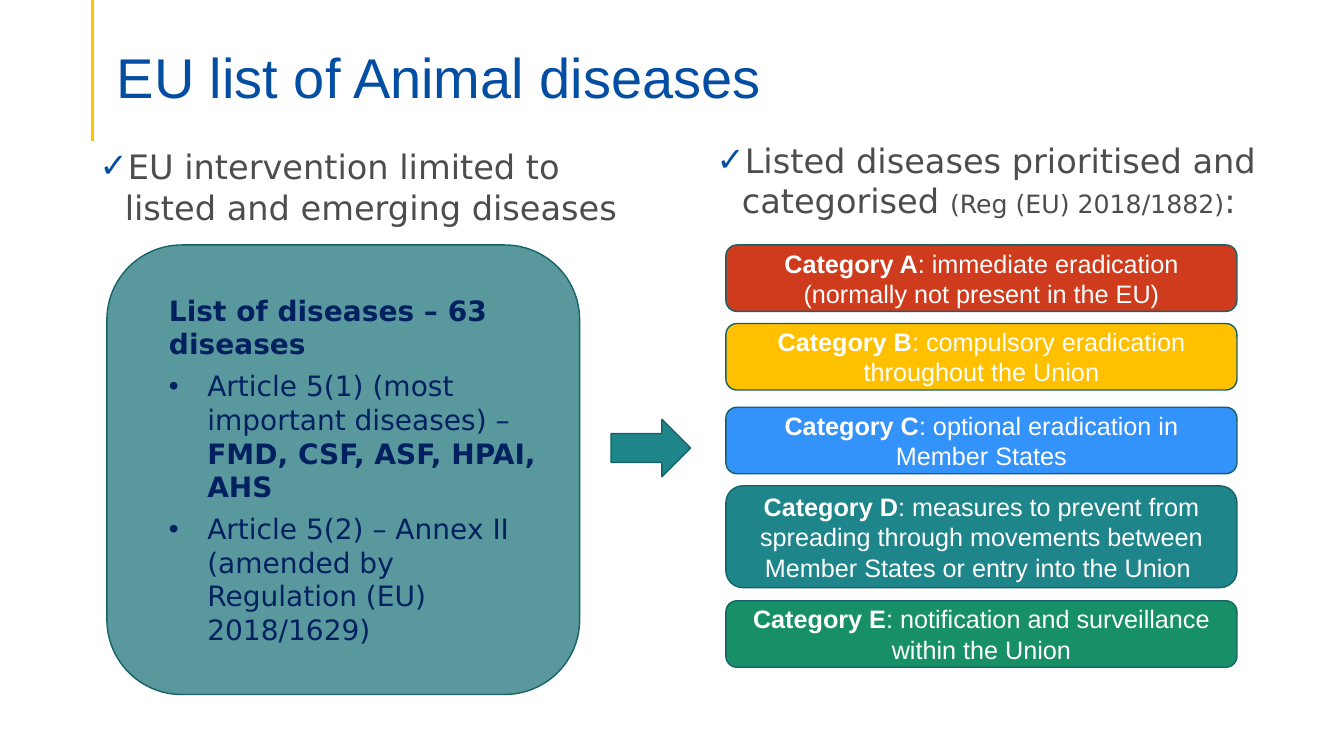
from lxml import etree
from pptx import Presentation
from pptx.dml.color import RGBColor
from pptx.enum.shapes import MSO_CONNECTOR, MSO_SHAPE
from pptx.enum.text import MSO_ANCHOR, PP_ALIGN
from pptx.oxml.ns import qn
from pptx.util import Inches, Pt

BLUE = RGBColor(0x03, 0x4E, 0xA2)
NAVY = RGBColor(0x00, 0x20, 0x60)
GREY = RGBColor(0x4D, 0x4D, 0x4D)
WHITE = RGBColor(0xFF, 0xFF, 0xFF)
RED = RGBColor(0xCF, 0x3B, 0x1D)
AMBER = RGBColor(0xFF, 0xC0, 0x00)
SKY = RGBColor(0x34, 0x92, 0xFB)
TEAL = RGBColor(0x1E, 0x85, 0x8B)
PALE_TEAL = RGBColor(0x59, 0x98, 0x9D)
DARK_TEAL = RGBColor(0x16, 0x62, 0x67)
GREEN = RGBColor(0x17, 0x90, 0x68)
SANS, BODY = "Arial", "DejaVu Sans"

# Grid of 100 columns by 100 rows; boxes are (left, top, width, height)
W, H = Inches(13.33), Inches(7.5)
COL, ROW = W / 100, H / 100

# Name, description, colour, top row within the region, rows high
CATEGORIES = [
    ("Category A", ": immediate eradication (normally not present in the EU)", RED, 0, 8.8),
    ("Category B", ": compulsory eradication throughout the Union", AMBER, 10.4, 8.8),
    ("Category C", ": optional eradication in Member States", SKY, 21.47, 8.8),
    ("Category D", ": measures to prevent from spreading through movements "
     "between Member States or entry into the Union ", TEAL, 31.87, 13.47),
    ("Category E", ": notification and surveillance within the Union", GREEN, 47.07, 8.8),
]


def place(box):
    x, y, w, h = box
    return round(x * COL), round(y * ROW), round(w * COL), round(h * ROW)


def add_runs(p, runs, font, color):
    """Add (text, size, bold) runs to a paragraph."""
    for text, size, bold in runs:
        r = p.add_run()
        r.text = text
        r.font.name, r.font.size, r.font.bold = font, Pt(size), bold
        r.font.color.rgb = color


def set_indent(p, left, hanging=0, bullet=None, color=None):
    pPr = p._p.get_or_add_pPr()
    pPr.set("marL", str(Inches(left)))
    pPr.set("indent", str(Inches(-hanging)))
    if color is not None:
        clr = etree.SubElement(pPr, qn("a:buClr"))
        etree.SubElement(clr, qn("a:srgbClr")).set("val", str(color))
    if bullet:
        etree.SubElement(pPr, qn("a:buFont")).set("typeface", SANS)
        etree.SubElement(pPr, qn("a:buChar")).set("char", bullet)
    p.space_after = Pt(6)


def add_block(s, kind, box, fill):
    sp = s.shapes.add_shape(kind, *place(box))
    sp.shadow.inherit = False
    sp.fill.solid()
    sp.fill.fore_color.rgb = fill
    sp.line.color.rgb = DARK_TEAL
    sp.line.width = Pt(1)
    tf = sp.text_frame
    tf.word_wrap = True
    tf.vertical_anchor = MSO_ANCHOR.MIDDLE
    return tf


def add_text(s, box):
    tf = s.shapes.add_textbox(*place(box)).text_frame
    tf.word_wrap = True
    return tf


def add_title(s, box, text):
    x, y, w, h = box
    # Accent rule left of the title, from the top edge of the slide
    rule_x = round((x - 1.05) * COL)
    rule = s.shapes.add_connector(MSO_CONNECTOR.STRAIGHT, rule_x, 0,
                                  rule_x, round((y + h + 4) * ROW))
    rule.line.color.rgb = AMBER
    rule.line.width = Pt(2.25)
    etree.SubElement(rule._element.spPr, qn("a:effectLst"))

    tf = add_text(s, box)
    tf.vertical_anchor = MSO_ANCHOR.BOTTOM
    tf.margin_bottom = 0
    p = tf.paragraphs[0]
    p.line_spacing = 0.9
    add_runs(p, [(text, 40, False)], SANS, BLUE)


def add_heading(s, box, runs):
    p = add_text(s, box).paragraphs[0]
    set_indent(p, 0.3, 0.25, "✓", BLUE)
    add_runs(p, runs, BODY, GREY)


def add_disease_list(s, box):
    tf = add_block(s, MSO_SHAPE.ROUNDED_RECTANGLE, box, PALE_TEAL)
    items = [
        [("List of diseases – 63 diseases", 20, True)],
        [("Article 5(1) (most important diseases) – ", 20, False),
         ("FMD, CSF, ASF, HPAI, AHS", 20, True)],
        [("Article 5(2) – Annex II (amended by Regulation (EU) 2018/1629)", 20, False)],
    ]
    for i, runs in enumerate(items):
        p = tf.add_paragraph() if i else tf.paragraphs[0]
        p.alignment = PP_ALIGN.LEFT
        if i:
            set_indent(p, 0.68, 0.38, "•")
        else:
            set_indent(p, 0.3)
        add_runs(p, runs, BODY, NAVY)


def add_categories(s, box):
    x, y, w, h = box
    for name, text, color, top, rows in CATEGORIES:
        tf = add_block(s, MSO_SHAPE.ROUNDED_RECTANGLE, (x, y + top, w, rows), color)
        p = tf.paragraphs[0]
        p.alignment = PP_ALIGN.CENTER
        add_runs(p, [(name, 18, True), (text, 18, False)], SANS, WHITE)


def main():
    prs = Presentation()
    prs.slide_width, prs.slide_height = W, H
    s = prs.slides.add_slide(prs.slide_layouts[6])

    add_title(s, (7.95, 3.2, 86.27, 11.47), "EU list of Animal diseases")
    # Left column: the list
    add_heading(s, (6.3, 18.67, 41.56, 19.33),
                [("EU intervention limited to listed and emerging diseases", 24, False)])
    add_disease_list(s, (7.95, 32.4, 35.18, 59.47))
    # Arrow to the right column: the categories
    add_block(s, MSO_SHAPE.RIGHT_ARROW, (45.46, 55.47, 5.93, 7.6), TEAL)
    add_heading(s, (52.21, 17.87, 43.74, 14.53),
                [("Listed diseases prioritised and categorised ", 24, False),
                 ("(Reg (EU) 2018/1882)", 18, False), (":", 24, False)])
    add_categories(s, (54.01, 32.4, 38.03, 55.87))

    prs.save("out.pptx")


if __name__ == "__main__":
    main()
